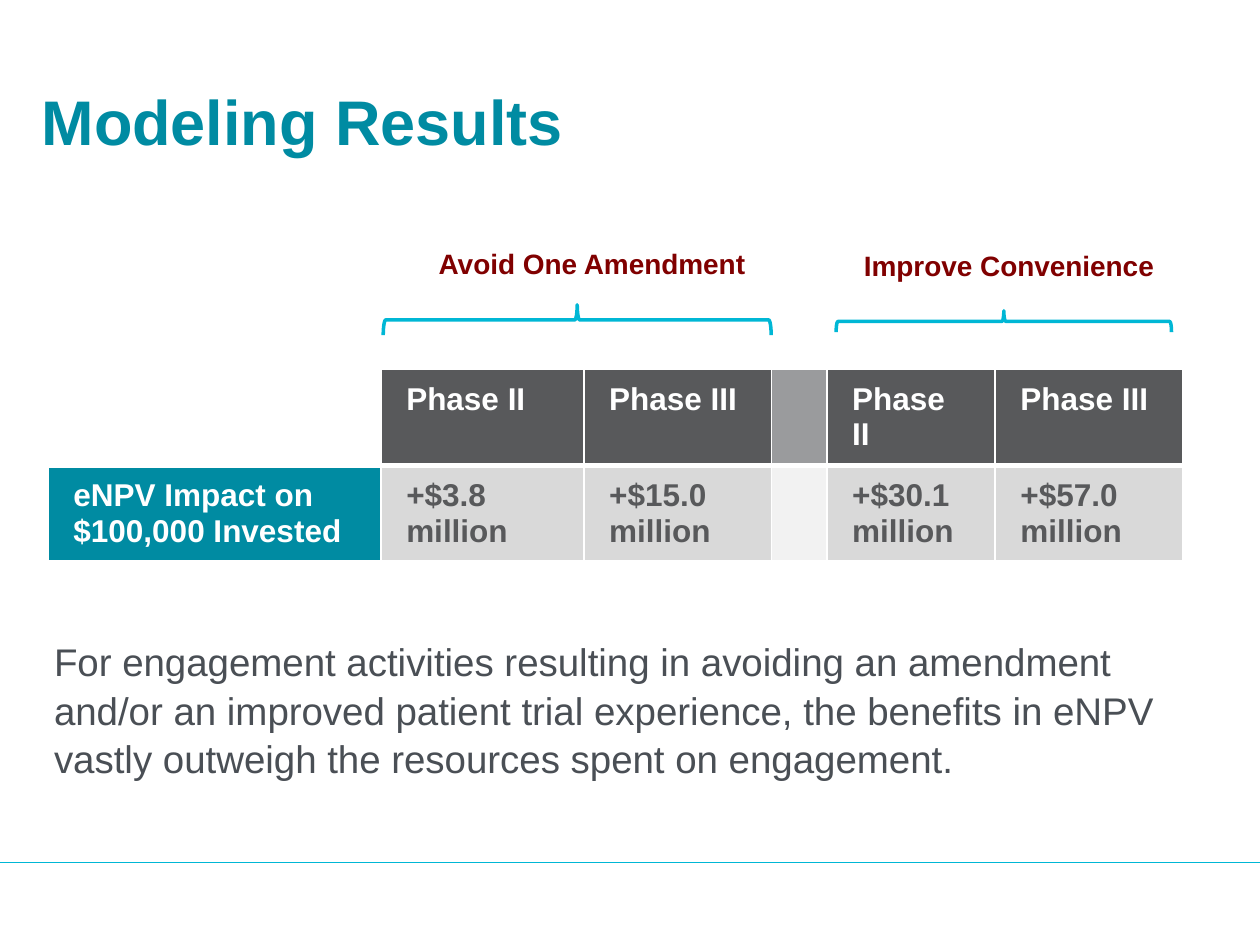
from typing import NamedTuple

from lxml.etree import SubElement
from pptx import Presentation
from pptx.dml.color import RGBColor
from pptx.enum.shapes import MSO_CONNECTOR, MSO_SHAPE
from pptx.enum.text import MSO_ANCHOR, PP_ALIGN
from pptx.oxml.ns import qn
from pptx.util import Cm, Pt

COLORS = {
    "teal": "008BA2", "cyan": "00B7D5", "maroon": "800000", "white": "FFFFFF",
    "charcoal": "58595B", "slate": "4A4F55", "gray": "9A9B9D",
    "silver": "D9D9D9", "pale": "F2F2F2",
}


class Box(NamedTuple):
    left: float
    top: float
    width: float
    height: float

    def lengths(self):
        return [Cm(v) for v in self]


class Group(NamedTuple):
    label: str
    label_box: Box
    brace_box: Box


class Cell(NamedTuple):
    text: str
    fill: str
    color: str = "white"


GROUPS = [
    Group("Improve Convenience", Box(16.76, 4.88, 7.16, 0.94), Box(20.02, 3.1, 0.43, 6.76)),
    Group("Avoid One Amendment", Box(8.05, 4.85, 7.77, 0.94), Box(11.33, 2.54, 0.61, 7.82)),
]
COL_WIDTHS = [6.71, 4.09, 3.78, 1.09, 3.39, 3.78]
ROW_HEIGHTS = [1.95, 1.88]
ROWS = [
    [Cell("", "white"), Cell("Phase II", "charcoal"), Cell("Phase III", "charcoal"),
     Cell("", "gray"), Cell("Phase II", "charcoal"), Cell("Phase III", "charcoal")],
    [Cell("eNPV Impact on $100,000 Invested", "teal"),
     Cell("+$3.8 million", "silver", "charcoal"),
     Cell("+$15.0 million", "silver", "charcoal"),
     Cell("", "pale"),
     Cell("+$30.1 million", "silver", "charcoal"),
     Cell("+$57.0 million", "silver", "charcoal")],
]
SUMMARY = (
    "For engagement activities resulting in avoiding an amendment and/or an "
    "improved patient trial experience, the benefits in eNPV vastly outweigh "
    "the resources spent on engagement."
)


def rgb(name: str) -> RGBColor:
    return RGBColor.from_string(COLORS[name])


def style_text(p, size: float, color: str, bold: bool = False) -> None:
    for r in p.runs:
        r.font.name = "Arial"
        r.font.size = Pt(size)
        r.font.bold = bold
        r.font.color.rgb = rgb(color)


def add_text(s, box: Box, text: str, size: float, color: str, bold: bool = False):
    tf = s.shapes.add_textbox(*box.lengths()).text_frame
    tf.word_wrap = True
    tf.text = text
    p = tf.paragraphs[0]
    style_text(p, size, color, bold)
    return p


def add_group(s, group: Group) -> None:
    sp = s.shapes.add_shape(MSO_SHAPE.LEFT_BRACE, *group.brace_box.lengths())
    sp.rotation = 90
    sp.shadow.inherit = False
    sp.fill.background()
    sp.line.color.rgb = rgb("cyan")
    sp.line.width = Pt(2)
    p = add_text(s, group.label_box, group.label, 16, "maroon", True)
    p.alignment = PP_ALIGN.CENTER


def set_borders(cell, top: float, bottom: float) -> None:
    tc_pr = cell._tc.get_or_add_tcPr()
    for tag, width in (("a:lnL", 1), ("a:lnR", 1), ("a:lnT", top), ("a:lnB", bottom)):
        ln = SubElement(tc_pr, qn(tag), w=str(Pt(width)))
        fill = SubElement(ln, qn("a:solidFill"))
        SubElement(fill, qn("a:srgbClr"), val=COLORS["white"])


def add_results(s) -> None:
    box = Box(0.97, 7.44, sum(COL_WIDTHS), sum(ROW_HEIGHTS))
    table = s.shapes.add_table(len(ROWS), len(COL_WIDTHS), *box.lengths()).table
    for col, width in zip(table.columns, COL_WIDTHS):
        col.width = Cm(width)
    for row, height in zip(table.rows, ROW_HEIGHTS):
        row.height = Cm(height)
    for i, row in enumerate(ROWS):
        for j, data in enumerate(row):
            cell = table.cell(i, j)
            set_borders(cell, 1 if i == 0 else 3, 3 if i == 0 else 1)
            cell.fill.solid()
            cell.fill.fore_color.rgb = rgb(data.fill)
            cell.margin_left = cell.margin_right = Cm(0.51)
            cell.margin_top = cell.margin_bottom = Cm(0.25)
            if data.text:
                cell.text_frame.text = data.text
                style_text(cell.text_frame.paragraphs[0], 18, data.color, True)


def add_title(s, text: str) -> None:
    sp = s.shapes.title
    sp.left, sp.top, sp.width, sp.height = Box(0.84, 1.47, 11.76, 1.9).lengths()
    tf = sp.text_frame
    tf.margin_left = tf.margin_right = tf.margin_top = tf.margin_bottom = 0
    tf.vertical_anchor = MSO_ANCHOR.MIDDLE
    tf.text = text
    tf.paragraphs[0].alignment = PP_ALIGN.LEFT
    style_text(tf.paragraphs[0], 36, "teal", True)


def add_footer_rule(s, width: int) -> None:
    line = s.shapes.add_connector(MSO_CONNECTOR.STRAIGHT, 0, Cm(17.39), width, Cm(17.39))
    line.line.color.rgb = rgb("cyan")
    line.line.width = Pt(0.75)
    SubElement(line._element.spPr, qn("a:effectLst"))


def main() -> None:
    prs = Presentation()
    prs.slide_width, prs.slide_height = Cm(25.4), Cm(19.05)
    s = prs.slides.add_slide(prs.slide_layouts[5])
    add_footer_rule(s, prs.slide_width)
    add_title(s, "Modeling Results")
    add_results(s)
    for group in GROUPS:
        add_group(s, group)
    p = add_text(s, Box(0.84, 12.7, 23.04, 3.07), SUMMARY, 22, "slate")
    p.line_spacing = 1.05
    p.space_after = Pt(6)
    prs.save("out.pptx")


if __name__ == "__main__":
    main()
